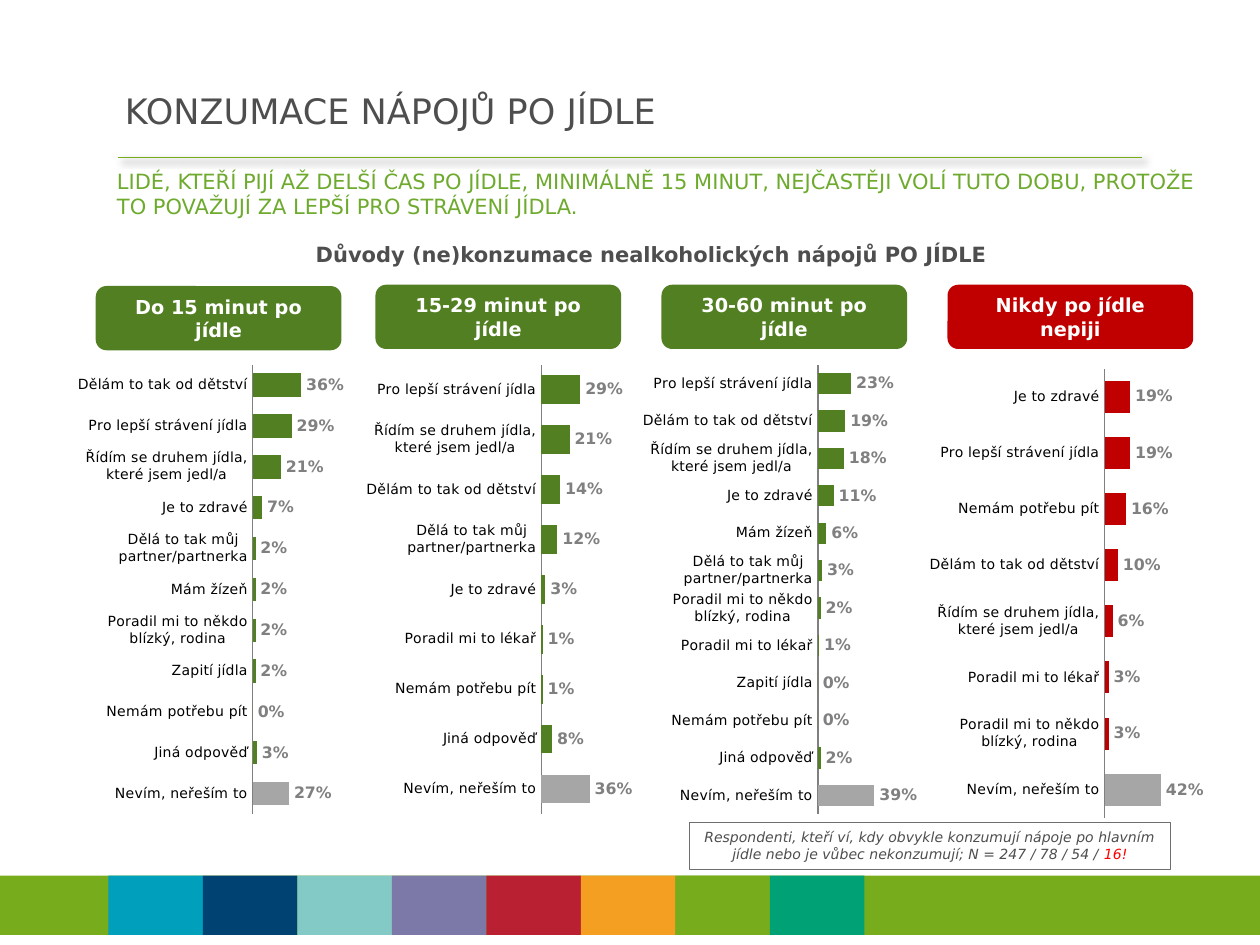
"""Build the slide on drinking after meals, with four charts of reasons."""
from lxml import etree
from pptx import Presentation
from pptx.chart import data
from pptx.dml import color
from pptx.enum import chart as charts, shapes, text
from pptx.oxml import ns, parse_xml
from pptx.util import Inches, Pt

FONT = "DejaVu Sans"
COLORS = {
    "title": "4E4E4E", "message": "6EAA2E", "band": "77AD1C", "drinkers": "527F22",
    "abstainers": "C00000", "unsure": "A6A6A6", "values": "808080", "axis": "808080",
    "border": "6E6E6E", "warning": "FF0000", "white": "FFFFFF", "black": "000000",
}
TILES = ["009FBB", "004272", "83C9C6", "7C78A8", "B92032", "F49F22", "77AD1C", "00A275"]
REASONS = {
    "childhood": "Dělám to tak od dětství",
    "digestion": "Pro lepší strávení jídla",
    "food": "Řídím se druhem jídla, které jsem jedl/a",
    "healthy": "Je to zdravé",
    "partner": "Dělá to tak můj partner/partnerka",
    "thirst": "Mám žízeň",
    "family": "Poradil mi to někdo blízký, rodina",
    "doctor": "Poradil mi to lékař",
    "rinse": "Zapití jídla",
    "no_need": "Nemám potřebu pít",
    "other": "Jiná odpověď",
    "unsure": "Nevím, neřeším to",
}
GROUPS = [
    {"heading": "Do 15 minut po jídle", "color": "drinkers", "badge": (0.76, 2.27),
     "chart": (0.51, 2.69), "plot": (0.52, 0.37),
     "shares": dict(childhood=36, digestion=29, food=21, healthy=7, partner=2, thirst=2,
                    family=2, rinse=2, no_need=0, other=3, unsure=27)},
    {"heading": "15-29 minut po jídle", "color": "drinkers", "badge": (2.98, 2.26),
     "chart": (2.8, 2.69), "plot": (0.52, 0.37),
     "shares": dict(digestion=29, food=21, childhood=14, partner=12, healthy=3, doctor=1,
                    no_need=1, other=8, unsure=36)},
    {"heading": "30-60 minut po jídle", "color": "drinkers", "badge": (5.25, 2.26),
     "chart": (5.08, 2.69), "plot": (0.49, 0.4),
     "shares": dict(digestion=23, childhood=19, food=18, healthy=11, thirst=6, partner=3,
                    family=2, doctor=1, rinse=0, no_need=0, other=2, unsure=39)},
    {"heading": "Nikdy po jídle nepiji", "color": "abstainers", "badge": (7.52, 2.26),
     "chart": (7.27, 2.72), "plot": (0.52, 0.37),
     "shares": dict(healthy=19, digestion=19, no_need=16, childhood=10, food=6, doctor=3,
                    family=3, unsure=42)},
]


def rgb(name):
    """Return the colour for a palette name or a hex string."""
    return color.RGBColor.from_string(COLORS.get(name, name))


def set_font(font, size, color_name, **styles):
    """Apply the typeface, size, colour and any further styles."""
    formats = {"name": FONT, "size": Pt(size), **styles}
    for attribute, value in formats.items():
        setattr(font, attribute, value)
    font.color.rgb = rgb(color_name)


def write(shape, runs, size, align=text.PP_ALIGN.LEFT, wrap=True,
          anchor=text.MSO_ANCHOR.TOP, **styles):
    """Write one paragraph of (wording, colour) runs into a shape."""
    frame = shape.text_frame
    for attribute, value in {"word_wrap": wrap, "vertical_anchor": anchor}.items():
        setattr(frame, attribute, value)
    paragraph = frame.paragraphs[0]
    paragraph.alignment = align
    for wording, color_name in runs:
        run = paragraph.add_run()
        run.text = wording
        set_font(run.font, size, color_name, **styles)


def add_block(slide, kind, box, fill=None, border=None):
    """Add a preset shape with a plain fill or a thin border."""
    block = slide.shapes.add_shape(kind, *map(Inches, box))
    block.shadow.inherit = False
    if fill:
        block.fill.solid()
        block.fill.fore_color.rgb = rgb(fill)
    else:
        block.fill.background()
    if border:
        block.line.color.rgb = rgb(border)
        block.line.width = Pt(0.75)
    else:
        block.line.fill.background()
    return block


def add_caption(slide, box, wording, color_name, **formats):
    """Add a text box with one paragraph."""
    caption = slide.shapes.add_textbox(*map(Inches, box))
    write(caption, [(wording, color_name)], **formats)


def add_rule(slide):
    """Add the green line under the title with its soft shadow."""
    rule = slide.shapes.add_connector(
        shapes.MSO_CONNECTOR.STRAIGHT, *map(Inches, (0.94, 1.25, 9.06, 1.25)))
    rule.line.color.rgb = rgb("band")
    rule.line.width = Pt(0.75)
    rule._element.spPr.append(parse_xml(
        f'<a:effectLst {ns.nsdecls("a")}>'
        f'<a:outerShdw blurRad="{Pt(4)}" dist="{Pt(3)}" dir="2700000">'
        f'<a:srgbClr val="{COLORS["black"]}"><a:alpha val="40000"/></a:srgbClr>'
        '</a:outerShdw></a:effectLst>'))


def add_color_band(slide):
    """Add the footer band and its row of coloured tiles."""
    rectangle = shapes.MSO_SHAPE.RECTANGLE
    add_block(slide, rectangle, (0, 6.95, 10, 0.47), "band")
    for index, tile in enumerate(TILES):
        add_block(slide, rectangle, (0.86 + index * 0.75, 6.95, 0.75, 0.47), tile)


def place_plot(chart, left, width):
    """Fix the inner plot area as fractions of the chart."""
    plot_area = chart._chartSpace.chart.plotArea
    for old in plot_area.findall(ns.qn("c:layout")):
        plot_area.remove(old)
    layout = etree.Element(ns.qn("c:layout"))
    manual = etree.SubElement(layout, ns.qn("c:manualLayout"))
    settings = {"layoutTarget": "inner", "xMode": "edge", "yMode": "edge",
                "x": left, "y": 0.05, "w": width, "h": 0.87}
    for tag, value in settings.items():
        etree.SubElement(manual, ns.qn(f"c:{tag}")).set("val", str(value))
    plot_area.insert(0, layout)


def add_reason_chart(slide, group):
    """Add the bar chart of reasons for one group."""
    shares = group["shares"]
    reasons = data.CategoryChartData(number_format="0%")
    reasons.categories = [REASONS[key] for key in shares]
    reasons.add_series("Series 1", [share / 100 for share in shares.values()])
    chart = slide.shapes.add_chart(
        charts.XL_CHART_TYPE.BAR_CLUSTERED,
        *map(Inches, (*group["chart"], 2.88, 4.1)), reasons).chart
    set_font(chart.font, 8, "black")
    plot, categories, scale = chart.plots[0], chart.category_axis, chart.value_axis
    plot.has_data_labels = True
    labels = plot.data_labels
    formats = [
        (chart, {"has_legend": False, "has_title": False}),
        (plot, {"gap_width": 75, "vary_by_categories": False}),
        (categories, {"reverse_order": True, "has_major_gridlines": False,
                      "major_tick_mark": charts.XL_TICK_MARK.NONE}),
        (scale, {"minimum_scale": 0, "maximum_scale": 1, "visible": False,
                 "has_major_gridlines": False}),
        (labels, {"show_value": True, "number_format": "0%",
                  "number_format_is_linked": False,
                  "position": charts.XL_LABEL_POSITION.OUTSIDE_END}),
    ]
    for part, settings in formats:
        for attribute, value in settings.items():
            setattr(part, attribute, value)
    categories.format.line.color.rgb = rgb("axis")
    categories.format.line.width = Pt(0.75)
    set_font(categories.tick_labels.font, 8, "black")
    set_font(labels.font, 9, "values", bold=True)
    bars = plot.series[0]
    unsure_bar = bars.points[len(shares) - 1]
    for part, fill in ((bars, group["color"]), (unsure_bar, "unsure")):
        part.format.fill.solid()
        part.format.fill.fore_color.rgb = rgb(fill)
    place_plot(chart, *group["plot"])


def add_group(slide, group):
    """Add the chart and the heading badge of one group."""
    add_reason_chart(slide, group)
    badge = add_block(slide, shapes.MSO_SHAPE.ROUNDED_RECTANGLE,
                      (*group["badge"], 1.95, 0.51), group["color"])
    write(badge, [(group["heading"], "white")], 11, text.PP_ALIGN.CENTER,
          anchor=text.MSO_ANCHOR.MIDDLE, bold=True)


def main():
    """Build and save the slide."""
    deck = Presentation()
    deck.slide_width, deck.slide_height = Inches(10), Inches(7.5)
    slide = deck.slides.add_slide(deck.slide_layouts[5])
    add_rule(slide)
    add_color_band(slide)
    title = slide.shapes.title
    for side, length in dict(left=0.89, top=0.62, width=8.87, height=0.51).items():
        setattr(title, side, Inches(length))
    write(title, [("KONZUMACE NÁPOJŮ PO JÍDLE", "title")], 20,
          anchor=text.MSO_ANCHOR.MIDDLE)
    add_caption(slide, (0.83, 1.29, 8.82, 0.55),
                "LIDÉ, KTEŘÍ PIJÍ AŽ DELŠÍ ČAS PO JÍDLE, MINIMÁLNĚ 15 MINUT, NEJČASTĚJI "
                "VOLÍ TUTO DOBU, PROTOŽE TO POVAŽUJÍ ZA LEPŠÍ PRO STRÁVENÍ JÍDLA.",
                "message", size=12)
    add_caption(slide, (2.34, 1.87, 5.66, 0.3),
                "Důvody (ne)konzumace nealkoholických nápojů PO JÍDLE", "title",
                size=12, align=text.PP_ALIGN.CENTER, wrap=False, bold=True)
    for group in GROUPS:
        add_group(slide, group)
    note = add_block(slide, shapes.MSO_SHAPE.RECTANGLE, (5.47, 6.53, 3.82, 0.37),
                     border="border")
    write(note, [("Respondenti, kteří ví, kdy obvykle konzumují nápoje po hlavním jídle "
                  "nebo je vůbec nekonzumují; N = 247 / 78 / 54 / ", "title"),
                 ("16!", "warning")], 8, text.PP_ALIGN.CENTER, italic=True)
    deck.save("out.pptx")


if __name__ == "__main__":
    main()
